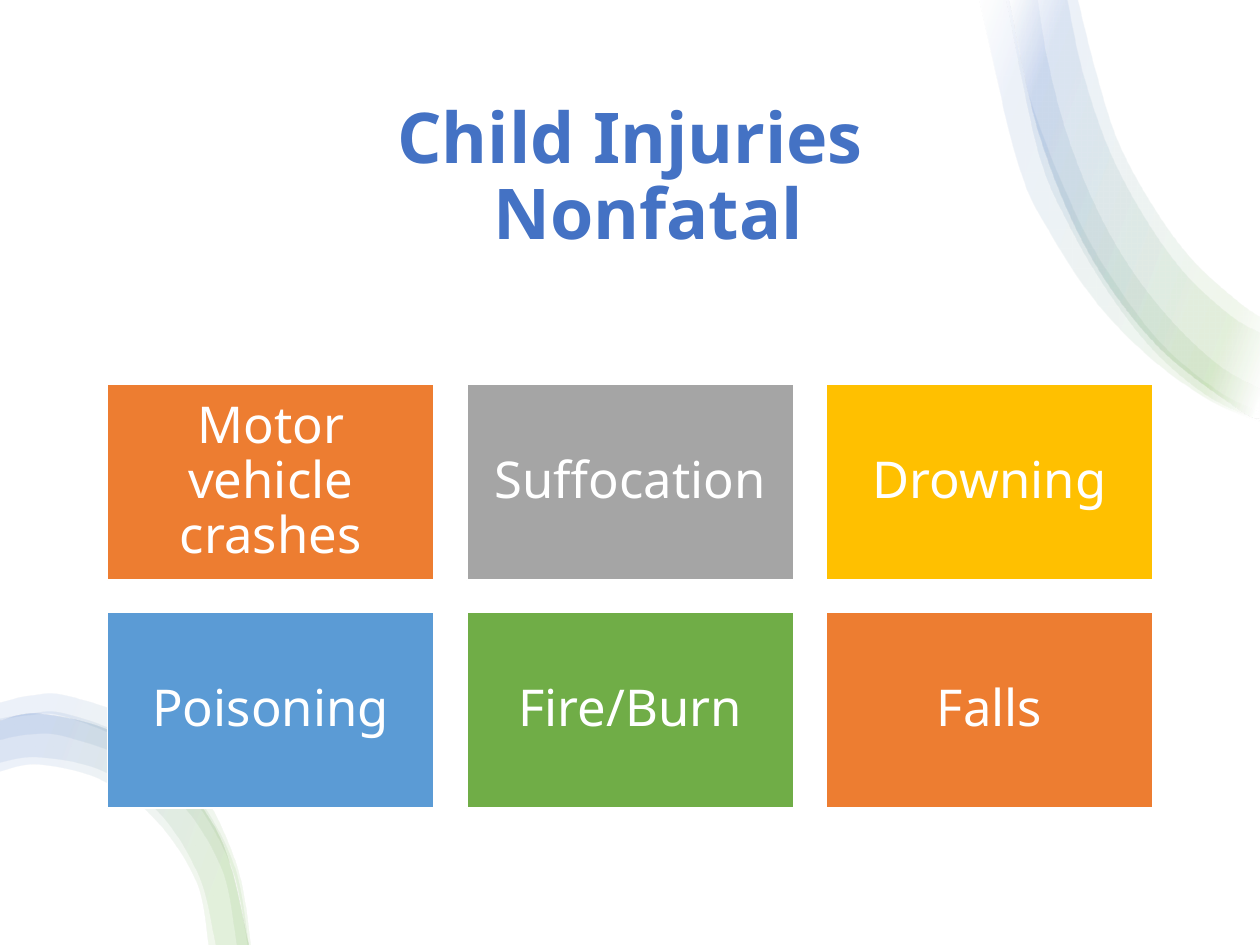
"""Build a slide on nonfatal child injuries with six coloured tiles."""
import pptx
import pptx.util
import pptx.oxml
import pptx.oxml.ns
import pptx.dml.color
import pptx.enum.shapes
import pptx.enum.text

Pt = pptx.util.Pt
RECT = pptx.enum.shapes.MSO_SHAPE.RECTANGLE
FONT = "Noto Sans"
SPACE = pptx.oxml.ns.nsdecls("a")


def paint(text):
    return pptx.dml.color.RGBColor.from_string(text)


def bend(line, p, q, r, s):
    nodes = [[b + (c - a) / 6 for a, b, c in zip(p, q, r)],
             [c - (d - b) / 6 for b, c, d in zip(q, r, s)], r]
    marks = "".join(f'<a:pt x="{round(x)}" y="{round(y)}"/>'
                    for x, y in nodes)
    curve = pptx.oxml.parse_xml(
        f'<a:cubicBezTo {SPACE}>{marks}</a:cubicBezTo>')
    line.getparent().replace(line, curve)


deck = pptx.Presentation()
deck.slide_width, deck.slide_height = Pt(720), Pt(540)
slide = deck.slides.add_slide(deck.slide_layouts[6])
shapes = slide.shapes

back = shapes.add_shape(RECT, 0, 0, Pt(720), Pt(540))
back.shadow.inherit = False
back.fill.solid()
back.fill.fore_color.rgb = paint("FFFFFF")
back.line.fill.background()

upper = [(577, 0), (594, 77), (622, 144), (661, 197), (707, 233), (720, 239)]
lower = [(0, 412), (22, 408), (63, 418), (100, 444), (127, 482), (142, 540)]
top = [
    ([(560, 0), (582, 94), (603, 138), (629, 176), (660, 207), (693, 230),
      (720, 241)],
     [(577, 0), (590, 60), (616, 125), (638, 163), (664, 197), (695, 223),
      (720, 236)]),
    (upper, [(616, 0), (626, 40), (639, 81), (659, 118), (681, 148),
             (706, 171), (720, 181)]),
    ([(575, 0), (593, 86), (611, 129), (634, 168), (660, 201), (690, 226),
      (720, 240)],
     [(593, 0), (598, 32), (609, 75), (625, 116), (645, 152), (670, 184),
      (697, 209), (720, 222)]),
    (upper, [(610, 0), (619, 42), (634, 86), (654, 124), (677, 156),
             (703, 180), (720, 190)]),
]
base = [
    (lower, [(0, 441), (22, 437), (58, 446), (89, 469), (112, 504),
             (119, 540)]),
    (lower, [(0, 436), (22, 433), (59, 441), (92, 466), (114, 502),
             (123, 540)]),
    ([(0, 411), (17, 408), (37, 408), (76, 423), (109, 451), (133, 493),
      (142, 540)],
     [(0, 423), (17, 420), (36, 421), (72, 434), (104, 460), (127, 498),
      (135, 540)]),
    ([(0, 402), (17, 398), (38, 398), (80, 414), (113, 449), (135, 495),
      (143, 540)],
     [(0, 412), (17, 409), (37, 410), (75, 426), (108, 454), (132, 496),
      (141, 540)]),
]
tints = [(2, "FFFFFF"), (16, "70AD47"), (85, "4472C4"), (100, "FFFFFF")]
for bands, range_ in [(top, tints), (base, tints[1:3])]:
    stops = "".join(
        f'<a:gs pos="{pos * 1000}"><a:srgbClr val="{tint}">'
        '<a:alpha val="10000"/></a:srgbClr></a:gs>' for pos, tint in range_)
    blend = (f'<a:gradFill {SPACE} rotWithShape="1"><a:gsLst>{stops}'
             '</a:gsLst><a:lin ang="12000000" scaled="0"/></a:gradFill>')
    for outer, inner in bands:
        knots = [(x * 100, y * 100) for x, y in outer + inner[::-1]]
        pen = shapes.build_freeform(*knots[0], scale=Pt(1) / 100)
        pen.add_line_segments(knots[1:], close=True)
        band = pen.convert_to_shape()
        band.shadow.inherit = False
        band.line.fill.background()
        band.fill.background()
        props = band.element.spPr
        blank = props.find(pptx.oxml.ns.qn("a:noFill"))
        props.replace(blank, pptx.oxml.parse_xml(blend))
        left = min(x for x, y in knots)
        head = min(y for x, y in knots)
        local = [(x - left, y - head) for x, y in knots]
        lines = list(props.iter(pptx.oxml.ns.qn("a:lnTo")))
        turn = len(outer)
        for start, end in [(0, turn), (turn, len(local))]:
            edge = local[start:end]
            ends = [edge[0], *edge, edge[-1]]
            for step in range(len(edge) - 1):
                bend(lines[start + step], *ends[step:step + 4])

title = shapes.add_textbox(Pt(47.5), Pt(55.5), Pt(625), Pt(93.6))
frame = title.text_frame
frame.word_wrap = True
frame.vertical_anchor = pptx.enum.text.MSO_ANCHOR.MIDDLE
frame.text = "Child Injuries\nNonfatal"
for para in frame.paragraphs:
    para.alignment = pptx.enum.text.PP_ALIGN.CENTER
    para.line_spacing = 0.9
    font = para.runs[0].font
    font.name, font.size, font.bold = FONT, Pt(40), True
    font.color.rgb = paint("4472C4")
frame.paragraphs[1]._p.get_or_add_pPr().set("marL", str(Pt(20.8)))

tiles = [("Motor vehicle crashes", "ED7D31"), ("Suffocation", "A5A5A5"),
         ("Drowning", "FFC000"), ("Poisoning", "5B9BD5"),
         ("Fire/Burn", "70AD47"), ("Falls", "ED7D31")]
for index, (label, tint) in enumerate(tiles):
    row, col = divmod(index, 3)
    tile = shapes.add_shape(RECT, Pt(61.4 + 205.4 * col),
                            Pt(219.6 + 130.3 * row), Pt(186.6), Pt(112))
    tile.shadow.inherit = False
    tile.fill.solid()
    tile.fill.fore_color.rgb = paint(tint)
    tile.line.color.rgb = paint("FFFFFF")
    tile.line.width = Pt(1)
    frame = tile.text_frame
    frame.word_wrap = True
    frame.vertical_anchor = pptx.enum.text.MSO_ANCHOR.MIDDLE
    frame.margin_left = frame.margin_right = Pt(8.7)
    frame.margin_top = frame.margin_bottom = Pt(8.7)
    frame.text = label
    para = frame.paragraphs[0]
    para.alignment = pptx.enum.text.PP_ALIGN.CENTER
    para.line_spacing = 0.9
    font = para.runs[0].font
    font.name, font.size = FONT, Pt(29)
    font.color.rgb = paint("FFFFFF")

deck.save("out.pptx")
